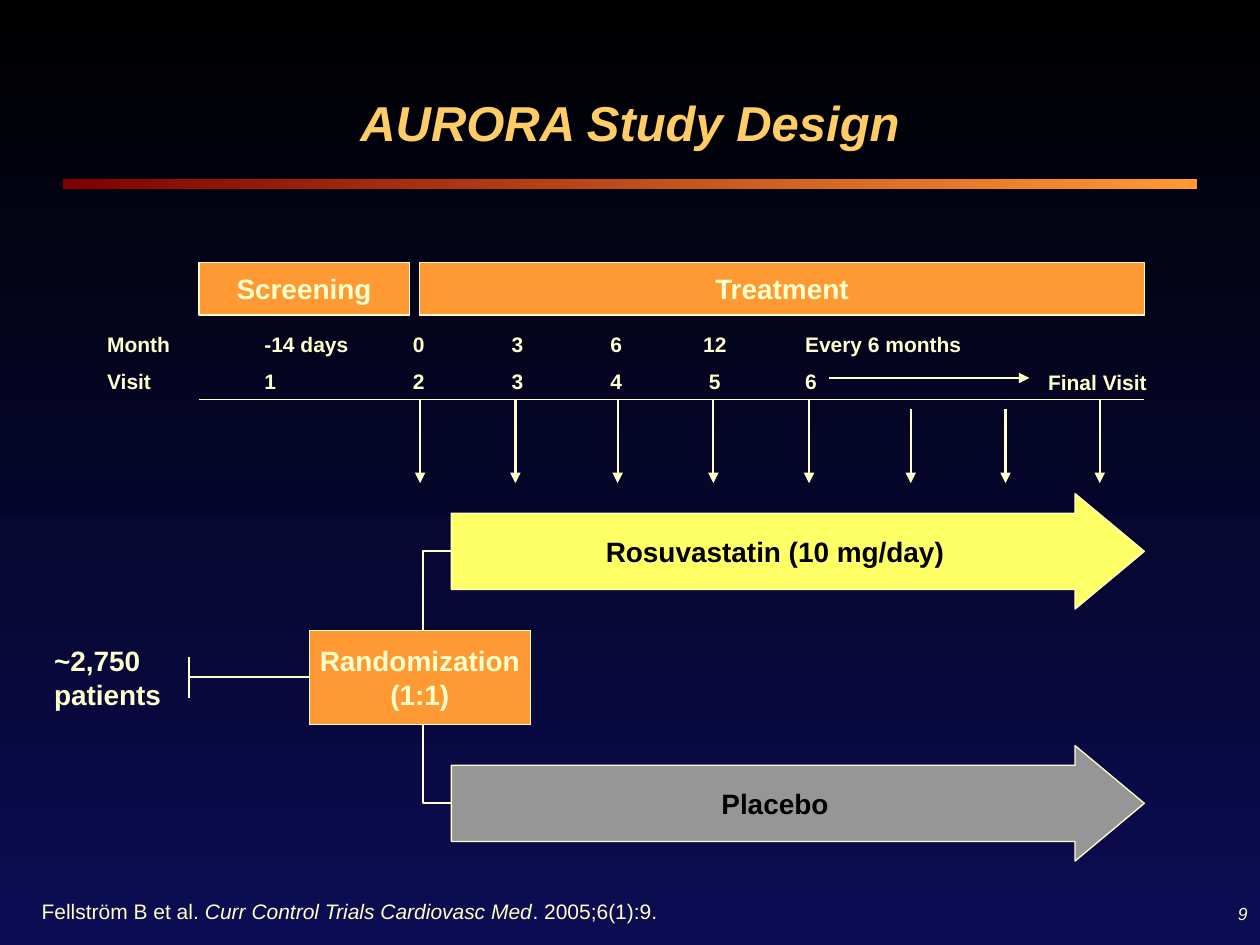
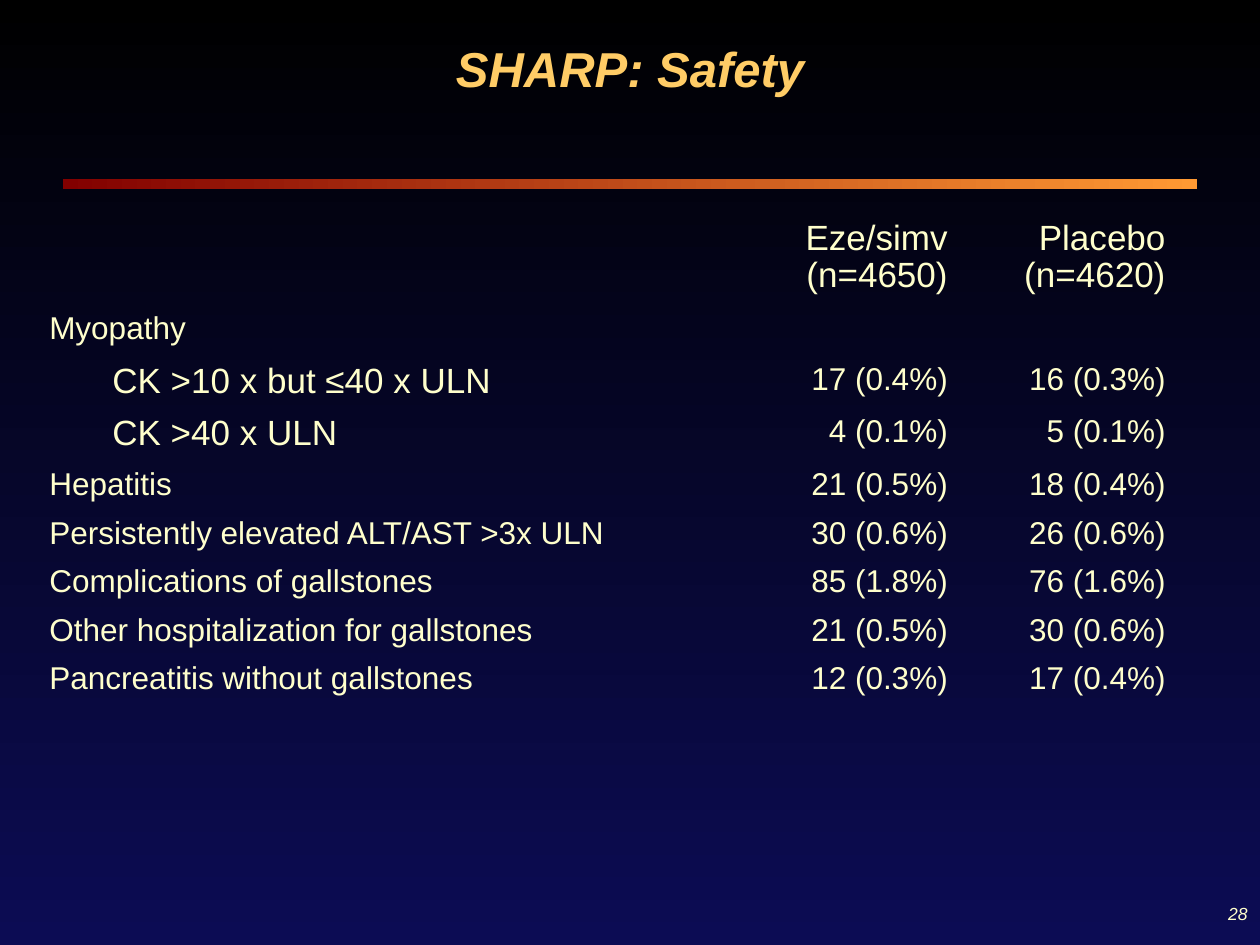
from dataclasses import dataclass
from lxml.etree import SubElement
from pptx import Presentation
from pptx.dml.color import RGBColor
from pptx.enum.shapes import MSO_CONNECTOR, MSO_SHAPE
from pptx.enum.text import MSO_ANCHOR, MSO_AUTO_SIZE, PP_ALIGN
from pptx.oxml.ns import qn
from pptx.util import Cm, Pt

FONT = "Arial"
CREAM, ORANGE, GOLD, DARK_RED = "FFFFCC", "FF9933", "FFCC66", "820000"
BLACK, NAVY, YELLOW, GREY = "000000", "0C0C54", "FFFF66", "969696"
PLAIN_TABLE_STYLE = "{2D5ABB26-0587-4C30-8999-92F81FD0307C}"


@dataclass
class Box:
    left: float
    top: float
    width: float
    height: float

    def inner(self, left, top, width, height):
        return Box(self.left + left, self.top + top, width, height)

    def lengths(self):
        return [Cm(v) for v in (self.left, self.top, self.width, self.height)]


def colour(value):
    return RGBColor.from_string(value)


def gradient(fill, start, end, angle):
    fill.gradient()
    fill.gradient_angle = angle
    for stop, value in zip(fill.gradient_stops, (start, end)):
        stop.color.rgb = colour(value)


def write(para, text, size, value=CREAM, bold=False, italic=False):
    for number, line in enumerate(text.split("\n")):
        if number:
            para.add_line_break()
        span = para.add_run()
        span.text = line
        span.font.name = FONT
        span.font.size = Pt(size)
        span.font.color.rgb = colour(value)
        span.font.bold = bold
        span.font.italic = italic


def add_text(page, box, lines, size, align=PP_ALIGN.LEFT, bold=True, italic=False,
             anchor=MSO_ANCHOR.TOP):
    frame = page.shapes.add_textbox(*box.lengths()).text_frame
    frame.word_wrap = True
    frame.vertical_anchor = anchor
    for number, line in enumerate(lines):
        para = frame.add_paragraph() if number else frame.paragraphs[0]
        para.alignment = align
        if number:
            para.space_before = Pt(6.8)
        write(para, line, size, bold=bold, italic=italic)
    return frame


def add_block(page, kind, box, text, fill, text_colour=CREAM):
    shape = page.shapes.add_shape(kind, *box.lengths())
    shape.shadow.inherit = False
    shape.fill.solid()
    shape.fill.fore_color.rgb = colour(fill)
    shape.line.color.rgb = colour(CREAM)
    shape.line.width = Pt(0.75)
    frame = shape.text_frame
    frame.word_wrap = False
    frame.vertical_anchor = MSO_ANCHOR.MIDDLE
    para = frame.paragraphs[0]
    para.alignment = PP_ALIGN.CENTER
    write(para, text, 16, text_colour, bold=True)
    return shape


def add_line(page, x1, y1, x2, y2, weight=1.25, arrow=False):
    line = page.shapes.add_connector(
        MSO_CONNECTOR.STRAIGHT, Cm(x1), Cm(y1), Cm(x2), Cm(y2))
    line.line.color.rgb = colour(CREAM)
    line.line.width = Pt(weight)
    properties = line.element.spPr
    if arrow:
        SubElement(properties.find(qn("a:ln")), qn("a:tailEnd"), type="triangle")
    SubElement(properties, qn("a:effectLst"))


def start_page(deck, title, title_box, anchor, number):
    page = deck.slides.add_slide(deck.slide_layouts[5])
    heading = page.shapes.title
    heading.left, heading.top, heading.width, heading.height = title_box.lengths()
    frame = heading.text_frame
    frame.auto_size = MSO_AUTO_SIZE.NONE
    frame.vertical_anchor = anchor
    frame.paragraphs[0].alignment = PP_ALIGN.CENTER
    write(frame.paragraphs[0], title, 28, GOLD, bold=True, italic=True)

    band = page.shapes.add_shape(
        MSO_SHAPE.RECTANGLE, *Box(1.27, 3.6, 22.86, 0.21).lengths())
    band.shadow.inherit = False
    band.line.fill.background()
    gradient(band.fill, DARK_RED, ORANGE, 0)
    add_text(page, Box(20.09, 17.78, 5.31, 1.27), [number], 10, PP_ALIGN.RIGHT,
             bold=False, italic=True, anchor=MSO_ANCHOR.MIDDLE)
    return page


def add_phases(page, box):
    screening, gap = 4.24, 0.21
    treatment = screening + gap
    for text, left, width in (("Screening", 0, screening),
                              ("Treatment", treatment, box.width - treatment)):
        add_block(page, MSO_SHAPE.RECTANGLE, box.inner(left, 0, width, box.height),
                  text, ORANGE)


def add_schedule(page, box):
    columns = [(0, 2.74, "Month", "Visit"), (3.17, 2.74, "-14 days", "1"),
               (14.07, 5.13, "Every 6 months", "6")]
    for left, width, month, visit in columns:
        add_text(page, box.inner(left, 0, width, box.height), [month, visit], 12)
    for step, (month, visit) in enumerate(zip(("0", "3", "6", "12"), "2345")):
        add_text(page, box.inner(5.96 + 1.99 * step, 0, 1.14, box.height),
                 [month, visit], 12, PP_ALIGN.CENTER)
    add_text(page, box.inner(18.92, 0.77, 2.59, 0.76), ["Final Visit"], 12,
             PP_ALIGN.CENTER)
    repeat_y = box.top + 1.07
    add_line(page, box.left + 14.8, repeat_y, box.left + 18.84, repeat_y, arrow=True)


def add_visit_arrows(page, box):
    right, bottom = box.left + box.width, box.top + box.height
    add_line(page, box.left, box.top, right, box.top, 0.75)
    unnumbered = (14.35, 16.26)
    for offset in (4.46, 6.38, 8.44, 10.37, 12.3, *unnumbered, 18.16):
        x = box.left + offset
        top = box.top + (0.2 if offset in unnumbered else 0)
        add_line(page, x, top, x, bottom, arrow=True)


def add_arms(page, box):
    arm_left, arm_height, stem = 8.26, 2.33, 7.69
    arm_step = box.height - arm_height
    x, y = box.left, box.top
    upper = y + arm_height / 2
    lower = upper + arm_step
    middle = (upper + lower) / 2

    outline = page.shapes.build_freeform(Cm(x + arm_left), Cm(upper))
    outline.add_line_segments(
        [(Cm(x + stem), Cm(upper)), (Cm(x + stem), Cm(lower)),
         (Cm(x + arm_left), Cm(lower))], close=False)
    bracket = outline.convert_to_shape()
    bracket.shadow.inherit = False
    bracket.fill.background()
    bracket.line.color.rgb = colour(CREAM)
    bracket.line.width = Pt(1.25)

    arms = (("Rosuvastatin (10 mg/day)", YELLOW), ("Placebo", GREY))
    for number, (text, fill) in enumerate(arms):
        arm = add_block(
            page, MSO_SHAPE.RIGHT_ARROW,
            box.inner(arm_left, arm_step * number, box.width - arm_left, arm_height),
            text, fill, BLACK)
        arm.adjustments[0] = 0.66
        arm.adjustments[1] = 0.6

    add_line(page, x + 2.97, middle, x + 5.4, middle)
    add_line(page, x + 2.97, middle - 0.42, x + 2.97, middle + 0.42)
    add_block(page, MSO_SHAPE.RECTANGLE, Box(x + 5.4, middle - 0.95, 4.45, 1.9),
              "Randomization\n(1:1)", ORANGE)
    add_text(page, Box(x, middle - 0.8, 2.74, 1.63), ["~2,750\npatients"], 16)


def add_citation(page, box):
    frame = page.shapes.add_textbox(*box.lengths()).text_frame
    frame.word_wrap = True
    frame.vertical_anchor = MSO_ANCHOR.BOTTOM
    frame.margin_left = frame.margin_right = frame.margin_top = frame.margin_bottom = 0
    para = frame.paragraphs[0]
    write(para, "Fellström B et al. ", 12)
    write(para, "Curr Control Trials Cardiovasc Med", 12, italic=True)
    write(para, ". 2005;6(1):9.", 12)


def add_safety_table(page, box):
    rows = [
        ("", "Eze/simv\n(n=4650)", "Placebo\n(n=4620)"),
        ("Myopathy", "", ""),
        ("CK >10 x but ≤40 x ULN", "17 (0.4%)", "16 (0.3%)"),
        ("CK >40 x ULN", "4 (0.1%)", "5 (0.1%)"),
        ("Hepatitis", "21 (0.5%)", "18 (0.4%)"),
        ("Persistently elevated ALT/AST >3x ULN", "30 (0.6%)", "26 (0.6%)"),
        ("Complications of gallstones", "85 (1.8%)", "76 (1.6%)"),
        ("Other hospitalization for gallstones", "21 (0.5%)", "30 (0.6%)"),
        ("Pancreatitis without gallstones", "12 (0.3%)", "17 (0.4%)"),
    ]
    frame = page.shapes.add_table(len(rows), 3, *box.lengths())
    table = frame.table
    table.first_row = table.horz_banding = False
    for style in frame.element.iter(qn("a:tableStyleId")):
        style.text = PLAIN_TABLE_STYLE
    for column, width in zip(table.columns, (14.4, 4.22, 4.39)):
        column.width = Cm(width)
    for row_number, row in enumerate(rows):
        table.rows[row_number].height = Cm(0.84 if row_number else 0.91)
        for column_number, text in enumerate(row):
            cell = table.cell(row_number, column_number)
            cell.fill.background()
            if not text:
                continue
            indented = column_number == 0 and text.startswith("CK")
            size = 20 if row_number == 0 or indented else 18
            for number, line in enumerate(text.split("\n")):
                frame = cell.text_frame
                para = frame.add_paragraph() if number else frame.paragraphs[0]
                para.line_spacing = 0.95
                para.alignment = PP_ALIGN.RIGHT if column_number else PP_ALIGN.LEFT
                if indented:
                    para._p.get_or_add_pPr().set("marL", str(Cm(1.27)))
                write(para, line, size)


def build_study_design(deck):
    page = start_page(deck, "AURORA Study Design", Box(1.27, 0.64, 22.86, 2.54),
                      MSO_ANCHOR.BOTTOM, "9")
    add_phases(page, Box(4.01, 5.29, 19.06, 1.06))
    add_schedule(page, Box(1.91, 6.55, 21.5, 1.52))
    add_visit_arrows(page, Box(4.01, 8.05, 19.06, 1.69))
    add_arms(page, Box(0.84, 9.95, 22.23, 7.41))
    add_citation(page, Box(0.84, 18.2, 23.5, 0.43))


def build_safety(deck):
    page = start_page(deck, "SHARP: Safety", Box(0, 0, 25.4, 2.72),
                      MSO_ANCHOR.MIDDLE, "28")
    add_safety_table(page, Box(0.74, 4.32, 23.01, 9.86))


def main():
    deck = Presentation()
    deck.slide_width, deck.slide_height = Cm(25.4), Cm(19.05)
    gradient(deck.slide_master.background.fill, BLACK, NAVY, 270)
    build_study_design(deck)
    build_safety(deck)
    deck.save("out.pptx")


if __name__ == "__main__":
    main()
